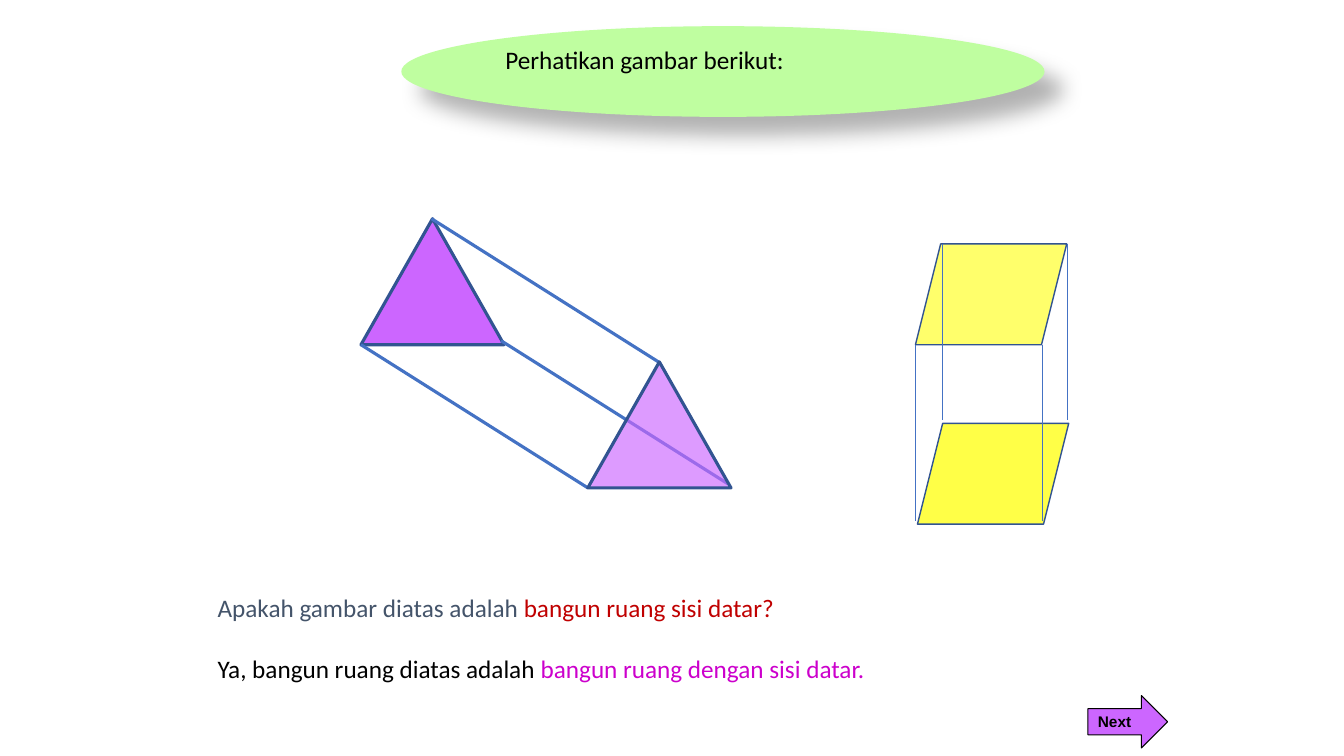
from lxml.etree import SubElement
from pptx import Presentation
from pptx.dml.color import RGBColor
from pptx.enum.shapes import MSO_CONNECTOR, MSO_SHAPE
from pptx.enum.text import MSO_ANCHOR, PP_ALIGN
from pptx.oxml.ns import qn
from pptx.util import Emu, Pt

EMU_PER_PX = 9144
BLACK = RGBColor(0x00, 0x00, 0x00)
SLATE = RGBColor(0x44, 0x54, 0x6A)
RED = RGBColor(0xC0, 0x00, 0x00)
MAGENTA = RGBColor(0xCC, 0x00, 0xCC)
PURPLE = RGBColor(0xCC, 0x66, 0xFF)
YELLOW = RGBColor(0xFF, 0xFF, 0x00)
GREEN = RGBColor(0xBF, 0xFE, 0xA0)
OUTLINE = RGBColor(0x32, 0x54, 0x91)
EDGE = RGBColor(0x44, 0x72, 0xC4)

BODY = {"name": "Calibri", "size": Pt(18), "bold": False}
BUTTON = {"name": "Arial", "size": Pt(11), "bold": True}


def px(*lengths):
    return [Emu(length * EMU_PER_PX) for length in lengths]


def apply(target, values):
    for name, value in values.items():
        setattr(target, name, value)


class SlideBuilder:
    def __init__(self, slide):
        self.shapes = slide.shapes

    def shape(self, kind, box, fill, line=None, width=1, opacity=100):
        shape = self.shapes.add_shape(kind, *px(*box))
        shape.shadow.inherit = False
        shape.fill.solid()
        shape.fill.fore_color.rgb = fill
        if opacity < 100:
            color = shape._element.spPr.find(qn("a:solidFill"))[0]
            SubElement(color, qn("a:alpha"), val=str(opacity * 1000))
        if line is None:
            shape.line.fill.background()
        else:
            shape.line.color.rgb = line
            shape.line.width = Pt(width)
        return shape

    def edge(self, start, shift, width):
        end = (start[0] + shift[0], start[1] + shift[1])
        edge = self.shapes.add_connector(MSO_CONNECTOR.STRAIGHT, *px(*start, *end))
        edge.line.color.rgb = EDGE
        edge.line.width = Pt(width)
        SubElement(edge._element.spPr, qn("a:effectLst"))

    def shadow(self, shape, color, opacity, blur, distance, angle):
        effects = shape._element.spPr.find(qn("a:effectLst"))
        outer = SubElement(
            effects, qn("a:outerShdw"), blurRad=str(Pt(blur)),
            dist=str(Pt(distance)), dir=str(angle * 60000), rotWithShape="0",
        )
        tint = SubElement(outer, qn("a:srgbClr"), val=str(color))
        SubElement(tint, qn("a:alpha"), val=str(opacity * 1000))

    def label(self, shape, paragraphs, style, anchor=MSO_ANCHOR.TOP, gap=0):
        frame = shape.text_frame
        apply(frame, {"word_wrap": True, "vertical_anchor": anchor})
        for index, runs in enumerate(paragraphs):
            paragraph = frame.add_paragraph() if index else frame.paragraphs[0]
            paragraph.alignment = PP_ALIGN.LEFT
            if index:
                paragraph.space_before = Pt(gap)
            for text, color in runs:
                run = paragraph.add_run()
                run.text = text
                apply(run.font, style)
                run.font.color.rgb = color

    def text(self, box, paragraphs, style, gap):
        self.label(self.shapes.add_textbox(*px(*box)), paragraphs, style, gap=gap)


def triangular_prism(builder):
    left, top, width, height = 358, 217, 142, 125
    shift = (225, 142)
    builder.shape(MSO_SHAPE.ISOSCELES_TRIANGLE, (left, top, width, height),
                  PURPLE, OUTLINE, 2.25)
    for corner in ((left, top + height), (left + width - 3, top + height - 4),
                   (left + width // 2 - 1, top)):
        builder.edge(corner, shift, 2.25)
    builder.shape(MSO_SHAPE.ISOSCELES_TRIANGLE,
                  (left + shift[0], top + shift[1], width, height),
                  PURPLE, OUTLINE, 2.25, opacity=65)


def parallelogram_prism(builder):
    left, top, width, height = 908, 242, 150, 100
    for x, y, opacity in ((left, top, 58), (left + 2, top + 178, 72)):
        builder.shape(MSO_SHAPE.PARALLELOGRAM, (x, y, width, height),
                      YELLOW, OUTLINE, 1, opacity)
    slant = 26
    for x, y in ((left, top + height), (left + width - slant + 2, top + height),
                 (left + slant + 1, top), (left + width + 1, top)):
        builder.edge((x, y), (0, 175), 0.5)


def main():
    deck = Presentation()
    deck.slide_width, deck.slide_height = px(1333, 750)
    builder = SlideBuilder(deck.slides.add_slide(deck.slide_layouts[6]))

    triangular_prism(builder)
    parallelogram_prism(builder)

    builder.text((206, 583, 938, 131), [
        [("Apakah gambar diatas adalah ", SLATE), ("bangun ruang sisi datar?", RED)],
        [("Ya, bangun ruang diatas adalah ", BLACK),
         ("bangun ruang dengan sisi datar.", MAGENTA)],
    ], BODY, gap=22)

    prompt = builder.shape(MSO_SHAPE.OVAL, (398, 26, 638, 90), GREEN)
    builder.shadow(prompt, BLACK, opacity=30, blur=15, distance=18, angle=45)
    builder.label(prompt, [[("Perhatikan gambar berikut:", BLACK)]], BODY)

    next_button = builder.shape(MSO_SHAPE.RIGHT_ARROW, (1079, 690, 79, 52),
                                PURPLE, BLACK, 0.75)
    builder.label(next_button, [[("Next", BLACK)]], BUTTON, MSO_ANCHOR.MIDDLE)

    deck.save("out.pptx")


if __name__ == "__main__":
    main()
